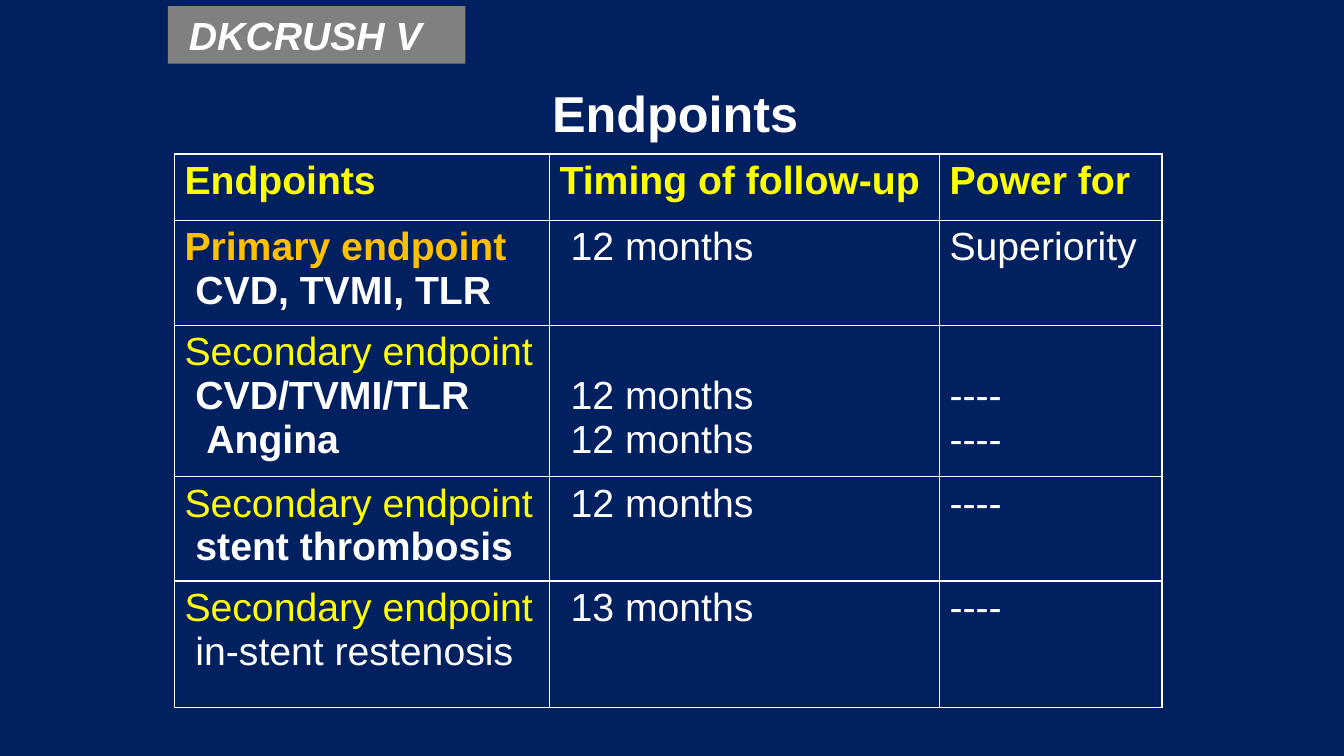
from lxml.etree import SubElement
from pptx import Presentation
from pptx.dml.color import RGBColor
from pptx.enum.shapes import MSO_SHAPE
from pptx.enum.text import MSO_ANCHOR, PP_ALIGN
from pptx.oxml.ns import qn
from pptx.util import Pt

COLORS = {"navy": "002060", "gray": "808080", "white": "FFFFFF",
          "yellow": "FFFF00", "gold": "FFC000"}
FONT = "Arial"
TRIAL = "DKCRUSH V"
TITLE = "Endpoints"

SECONDARY = ("Secondary endpoint", "yellow", False, 0)
NO_POWER = ("----", "white", False, 0)


def follow_up(months):
    """Return the line that states a follow-up time."""
    return (f"{months} months", "white", False, 1)


HEADINGS = [[(heading, "yellow", True, 0)]
            for heading in ("Endpoints", "Timing of follow-up", "Power for")]
ROWS = [
    (47.5, 0, HEADINGS),
    (75, 0, [[("Primary endpoint", "gold", True, 0), ("CVD, TVMI, TLR", "white", True, 1)],
             [follow_up(12)],
             [("Superiority", "white", False, 0)]]),
    (108, 1, [[SECONDARY, ("CVD/TVMI/TLR", "white", True, 1), ("Angina", "white", True, 2)],
              [follow_up(12), follow_up(12)],
              [NO_POWER, NO_POWER]]),
    (74, 0, [[SECONDARY, ("stent thrombosis", "white", True, 1)],
             [follow_up(12)],
             [NO_POWER]]),
    (90.5, 0, [[SECONDARY, ("in-stent restenosis", "white", False, 1)],
               [follow_up(13)],
               [NO_POWER]]),
]
COLUMN_WIDTHS = [268, 278.5, 159]
TABLE_LEFT, TABLE_TOP = 124.6, 110
TEXT_SIZE, TITLE_SIZE = 28, 36
INDENT, LINE_HEIGHT, CELL_MARGIN = 7.8, 31.2, 3.6


def rgb(name):
    """Return a named colour."""
    return RGBColor.from_string(COLORS[name])


def write(paragraph, text, color, bold, size=TEXT_SIZE, italic=False):
    """Fill a paragraph and set its font."""
    paragraph.text = text
    font = paragraph.font
    font.name, font.size, font.bold, font.italic = FONT, Pt(size), bold, italic
    font.color.rgb = rgb(color)


def add_borders(cell):
    """Draw white lines on all sides of a cell."""
    properties = cell._tc.get_or_add_tcPr()
    for side in ("a:lnL", "a:lnR", "a:lnT", "a:lnB"):
        border = SubElement(properties, qn(side), w=str(Pt(1)))
        fill = SubElement(border, qn("a:solidFill"))
        SubElement(fill, qn("a:srgbClr"), val=COLORS["white"])


def add_title(slide):
    """Add the centred slide title."""
    title = slide.shapes.add_textbox(Pt(176.4), Pt(50.4), Pt(612), Pt(59.8))
    frame = title.text_frame
    frame.word_wrap = True
    frame.vertical_anchor = MSO_ANCHOR.MIDDLE
    write(frame.paragraphs[0], TITLE, "white", True, TITLE_SIZE)
    frame.paragraphs[0].alignment = PP_ALIGN.CENTER


def add_trial_badge(slide):
    """Add the gray badge with the trial name."""
    badge = slide.shapes.add_shape(MSO_SHAPE.RECTANGLE, Pt(120), Pt(4.3), Pt(212.4), Pt(41.2))
    badge.shadow.inherit = False
    badge.fill.solid()
    badge.fill.fore_color.rgb = rgb("gray")
    badge.line.fill.background()
    frame = badge.text_frame
    frame.margin_left = Pt(15)
    frame.vertical_anchor = MSO_ANCHOR.MIDDLE
    write(frame.paragraphs[0], TRIAL, "white", True, italic=True)
    frame.paragraphs[0].alignment = PP_ALIGN.LEFT


def fill_cell(cell, lines, skipped_lines):
    """Write the lines of one cell and style it."""
    add_borders(cell)
    cell.fill.background()
    cell.margin_top = Pt(CELL_MARGIN + skipped_lines * LINE_HEIGHT)
    frame = cell.text_frame
    for index, (text, color, bold, level) in enumerate(lines):
        paragraph = frame.add_paragraph() if index else frame.paragraphs[0]
        write(paragraph, text, color, bold)
        paragraph._p.get_or_add_pPr().set("marL", str(Pt(level * INDENT)))


def add_endpoint_table(slide):
    """Add the table of endpoints."""
    table = slide.shapes.add_table(
        len(ROWS), len(COLUMN_WIDTHS), Pt(TABLE_LEFT), Pt(TABLE_TOP),
        Pt(sum(COLUMN_WIDTHS)), Pt(sum(height for height, _, _ in ROWS))).table
    table.first_row = table.horz_banding = False
    for column, width in zip(table.columns, COLUMN_WIDTHS):
        column.width = Pt(width)
    for row, (height, skipped_lines, cells) in zip(table.rows, ROWS):
        row.height = Pt(height)
        for index, (cell, lines) in enumerate(zip(row.cells, cells)):
            fill_cell(cell, lines, skipped_lines if index else 0)


def main():
    """Build and save the slide."""
    presentation = Presentation()
    presentation.slide_width, presentation.slide_height = Pt(960), Pt(540)
    slide = presentation.slides.add_slide(presentation.slide_layouts[6])
    slide.background.fill.solid()
    slide.background.fill.fore_color.rgb = rgb("navy")
    add_title(slide)
    add_trial_badge(slide)
    add_endpoint_table(slide)
    presentation.save("out.pptx")


if __name__ == "__main__":
    main()
